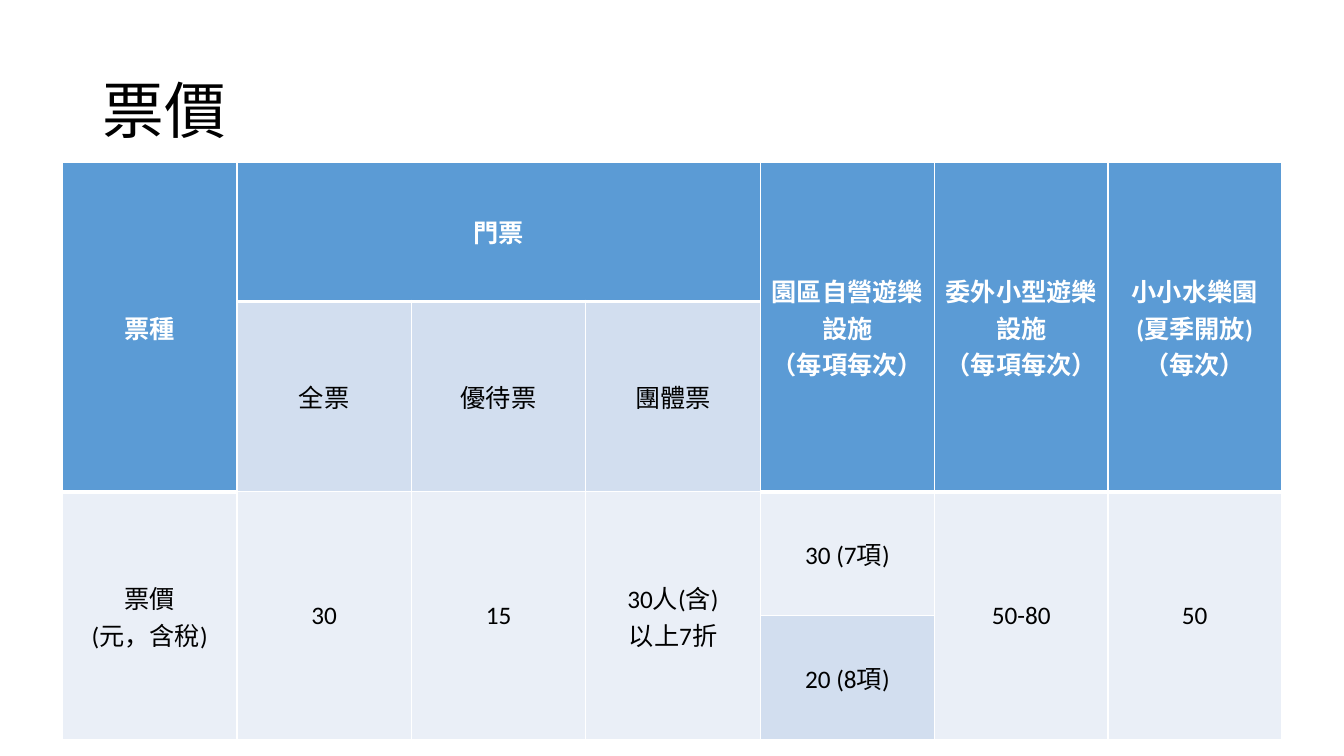
from dataclasses import dataclass

from lxml.etree import SubElement
from pptx import Presentation
from pptx.dml.color import RGBColor
from pptx.enum.text import MSO_ANCHOR, PP_ALIGN
from pptx.oxml.ns import qn
from pptx.util import Emu, Pt

SCALE = 9144
FONT = "Calibri"
WHITE, BLACK = "FFFFFF", "000000"
HEAD, BAND, PALE = "5B9BD5", "D2DEEF", "EAEFF7"
WIDTHS = [173, 173, 173, 173, 173, 172, 172]
HEIGHTS = [138, 189, 123, 123]


@dataclass
class Entry:
    row: int
    col: int
    text: str
    fill: str
    rows: int = 1
    cols: int = 1


ENTRIES = [
    Entry(0, 0, "票種", HEAD, rows=2),
    Entry(0, 1, "門票", HEAD, cols=3),
    Entry(0, 4, "園區自營遊樂設施\v（每項每次）", HEAD, rows=2),
    Entry(0, 5, "委外小型遊樂設施\v（每項每次）", HEAD, rows=2),
    Entry(0, 6, "小小水樂園\v(夏季開放)\v（每次）", HEAD, rows=2),
    Entry(1, 1, "全票", BAND),
    Entry(1, 2, "優待票", BAND),
    Entry(1, 3, "團體票", BAND),
    Entry(2, 0, "票價\v(元，含稅)", PALE, rows=2),
    Entry(2, 1, "30", PALE, rows=2),
    Entry(2, 2, "15", PALE, rows=2),
    Entry(2, 3, "30人(含)\v以上7折", PALE, rows=2),
    Entry(2, 4, "30 (7項)", PALE),
    Entry(2, 5, "50-80", PALE, rows=2),
    Entry(2, 6, "50", PALE, rows=2),
    Entry(3, 4, "20 (8項)", BAND),
]


def px(size: int) -> Emu:
    return Emu(size * SCALE)


def color(code: str) -> RGBColor:
    return RGBColor.from_string(code)


def style(para, size: int, code: str, bold: bool = False) -> None:
    para.font.name = FONT
    para.font.size = Pt(size)
    para.font.bold = bold
    para.font.color.rgb = color(code)


def border(cell, side: str, width: int) -> None:
    props = cell._tc.get_or_add_tcPr()
    line = SubElement(props, qn(f"a:{side}"), w=str(Pt(width)))
    fill = SubElement(line, qn("a:solidFill"))
    SubElement(fill, qn("a:srgbClr"), val=WHITE)


def paint(cell, code: str, top: int, base: int) -> None:
    for side, width in (("lnL", 1), ("lnR", 1), ("lnT", top), ("lnB", base)):
        border(cell, side, width)
    cell.fill.solid()
    cell.fill.fore_color.rgb = color(code)


def draw_entry(table, entry: Entry) -> None:
    end_row = entry.row + entry.rows
    end_col = entry.col + entry.cols
    head = entry.fill == HEAD
    below = entry.row == 1 or (entry.row == 2 and entry.col > 3)
    below = below or (entry.row == 2 and entry.col == 0)
    top = 3 if below and not (entry.row == 2 and 0 < entry.col < 4) else 1
    for row in range(entry.row, end_row):
        for col in range(entry.col, end_col):
            paint(table.cell(row, col), entry.fill,
                  top if row == entry.row else 1, 3 if head else 1)
    cell = table.cell(entry.row, entry.col)
    if entry.rows * entry.cols > 1:
        cell.merge(table.cell(end_row - 1, end_col - 1))
    cell.vertical_anchor = MSO_ANCHOR.MIDDLE
    cell.margin_left = cell.margin_right = px(3)
    cell.margin_top = cell.margin_bottom = px(3)
    para = cell.text_frame.paragraphs[0]
    para.text = entry.text
    para.alignment = PP_ALIGN.CENTER
    style(para, 18, WHITE if head else BLACK, head)


def draw_title(slide, text: str) -> None:
    box = slide.shapes.add_textbox(px(92), px(40), px(1150), px(145))
    frame = box.text_frame
    frame.word_wrap = True
    frame.vertical_anchor = MSO_ANCHOR.MIDDLE
    para = frame.paragraphs[0]
    para.text = text
    para.line_spacing = 0.9
    style(para, 44, BLACK)


def draw_table(slide) -> None:
    frame = slide.shapes.add_table(
        len(HEIGHTS), len(WIDTHS), px(62), px(161),
        px(sum(WIDTHS)), px(sum(HEIGHTS)))
    table = frame.table
    table.horz_banding = False
    for col, width in zip(table.columns, WIDTHS):
        col.width = px(width)
    for row, height in zip(table.rows, HEIGHTS):
        row.height = px(height)
    for entry in ENTRIES:
        draw_entry(table, entry)


def main() -> None:
    deck = Presentation()
    deck.slide_width = px(1333)
    deck.slide_height = px(750)
    slide = deck.slides.add_slide(deck.slide_layouts[6])
    draw_title(slide, "票價")
    draw_table(slide)
    deck.save("out.pptx")


if __name__ == "__main__":
    main()
